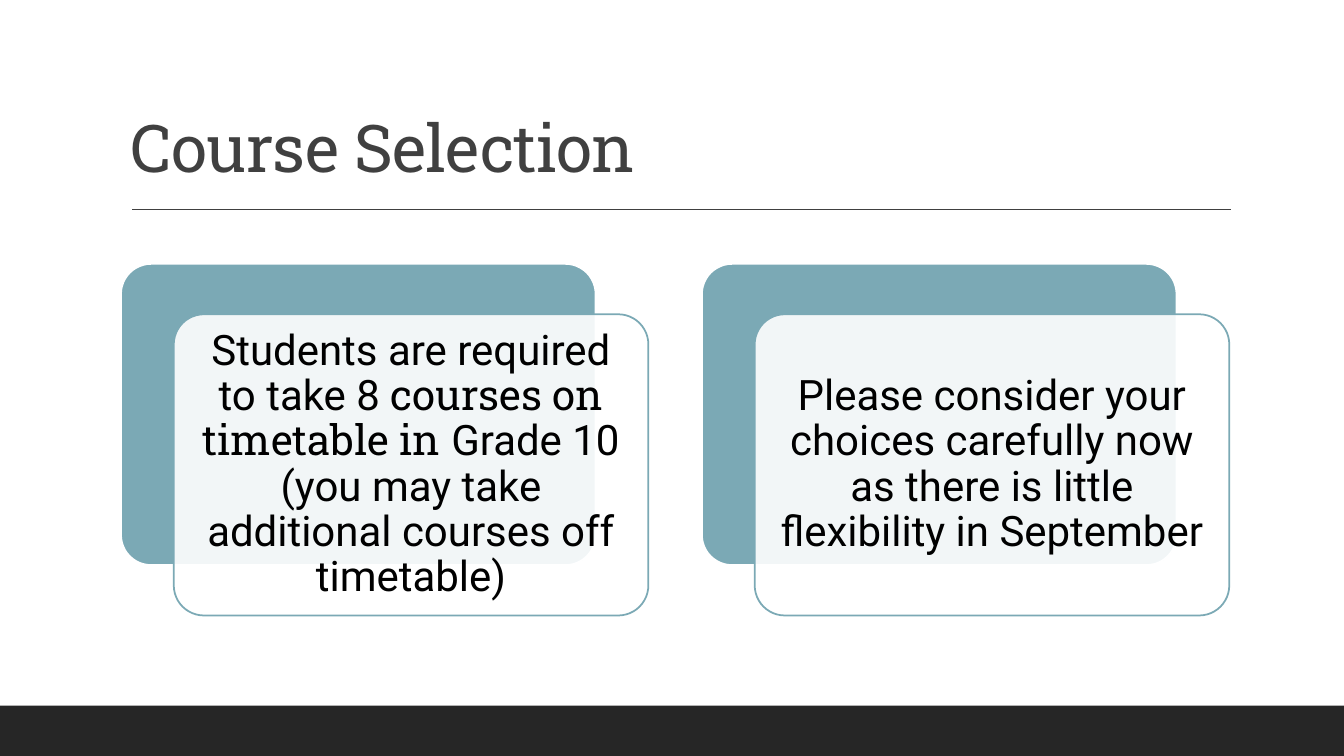
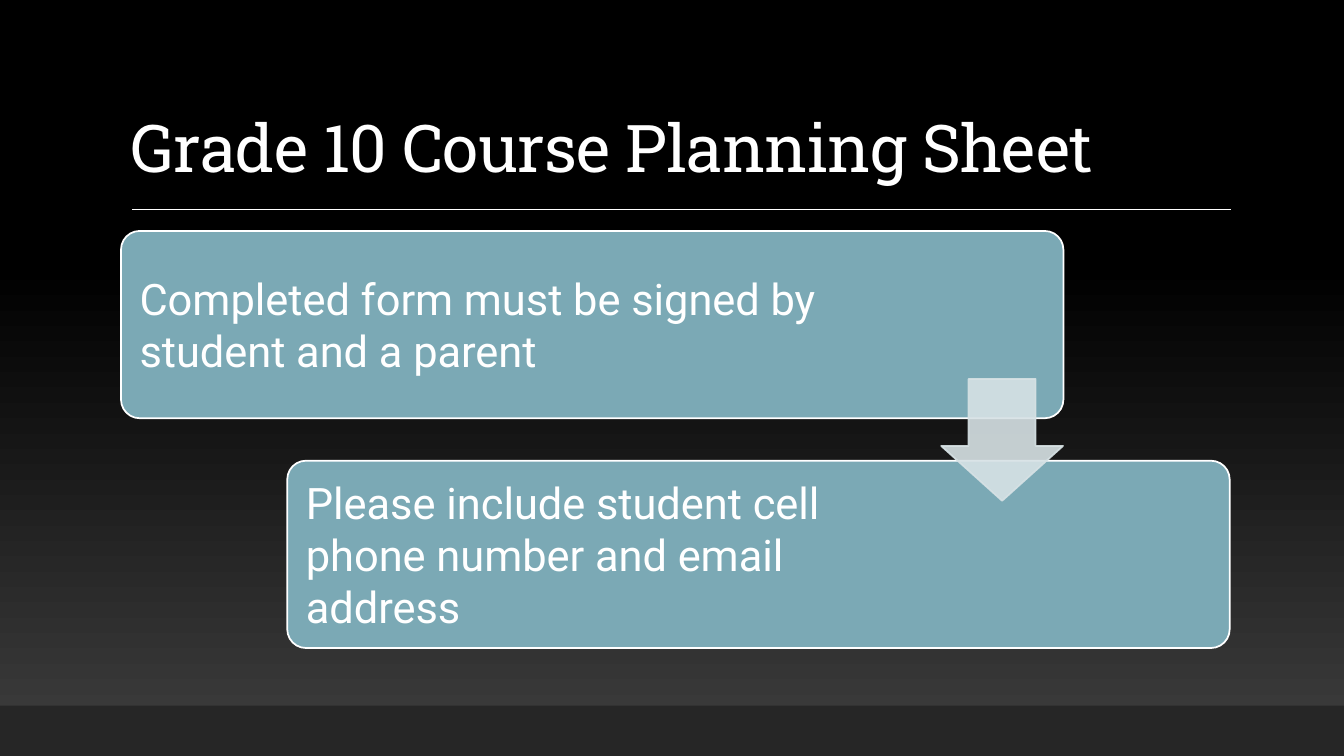
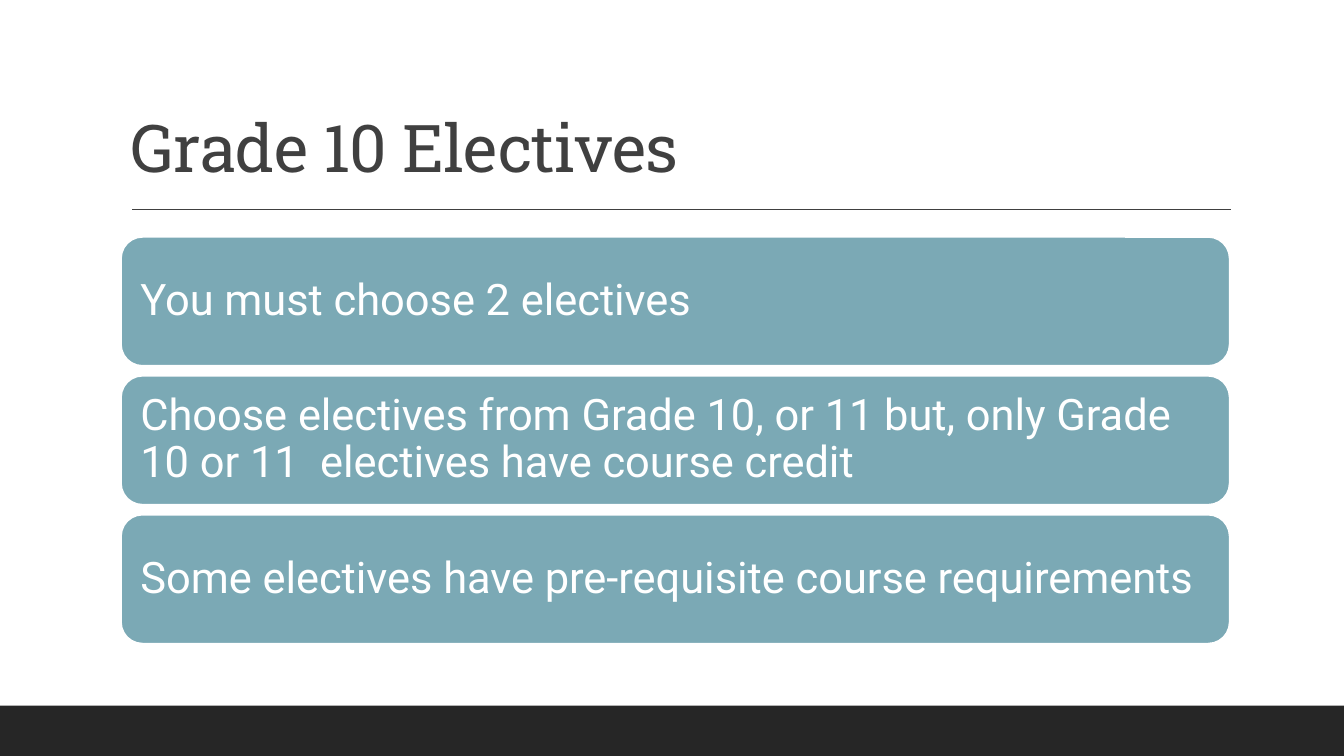
from lxml.etree import SubElement
from pptx import Presentation
from pptx.dml.color import RGBColor
from pptx.enum.shapes import MSO_CONNECTOR as Link, MSO_SHAPE as Form
from pptx.enum.text import MSO_ANCHOR as Anchor, PP_ALIGN as Align
from pptx.oxml.ns import qn
from pptx.util import Cm, Pt

WHITE = RGBColor(0xFF, 0xFF, 0xFF)
BLACK = RGBColor(0x00, 0x00, 0x00)
GREY = RGBColor(0x40, 0x40, 0x40)
ASH = RGBColor(0x3F, 0x3F, 0x3F)
COAL = RGBColor(0x26, 0x26, 0x26)
TEAL = RGBColor(0x7B, 0xA9, 0xB5)
MIST = RGBColor(0xD7, 0xE2, 0xE5)

SANS, SLAB = "Roboto", "Roboto Slab"
PAGE_W, PAGE_H = 33.87, 19.05
BAND_H = 1.27
LEFT, WIDE = 3.05, 27.94


class Deck:
    """Holds the shared style and the slide being drawn; lengths are in cm."""

    def __init__(self):
        self.prs = Presentation()
        self.prs.slide_width, self.prs.slide_height = Cm(PAGE_W), Cm(PAGE_H)
        self.slide = None

    def page(self, title, dark=False):
        """Start a slide with its background, band, rule and title."""
        self.slide = self.prs.slides.add_slide(self.prs.slide_layouts[6])
        fill = self.slide.background.fill
        if dark:
            fill.gradient()
            fill.gradient_angle = 90
            for stop, color, place in zip(fill.gradient_stops, (ASH, BLACK), (0, 0.65)):
                stop.color.rgb, stop.position = color, place
        else:
            fill.solid()
            fill.fore_color.rgb = WHITE
        ink = WHITE if dark else GREY
        self.shape(Form.RECTANGLE, 0, PAGE_H - BAND_H, PAGE_W, BAND_H, COAL)
        self.rule(3.33, 31.01, 5.28, ink)
        box = self.slide.shapes.add_textbox(Cm(LEFT), Cm(0.79), Cm(WIDE), Cm(4.04))
        self.label(box, [(title, SLAB)], 47, ink, anchor=Anchor.BOTTOM, space=0.9, track=-50)

    def rule(self, start, end, y, color):
        line = self.slide.shapes.add_connector(Link.STRAIGHT, Cm(start), Cm(y), Cm(end), Cm(y))
        line.line.color.rgb, line.line.width = color, Pt(1)
        SubElement(line._element.spPr, qn("a:effectLst"))

    def shape(self, form, x, y, w, h, color, edge=None, adj=(), alpha=None, edge_alpha=None):
        item = self.slide.shapes.add_shape(form, Cm(x), Cm(y), Cm(w), Cm(h))
        item.shadow.inherit = False
        for i, ratio in enumerate(adj):
            item.adjustments[i] = ratio
        item.fill.solid()
        item.fill.fore_color.rgb = color
        if edge is None:
            item.line.fill.background()
        else:
            item.line.color.rgb, item.line.width = edge, Pt(1.25)
        props = item._element.spPr
        self.fade(props, alpha)
        self.fade(props.find(qn("a:ln")), edge_alpha)
        return item

    def fade(self, node, alpha):
        """Set the opacity, in percent, of the solid fill right under node."""
        if alpha is not None:
            color = node.find(qn("a:solidFill"))[0]
            SubElement(color, qn("a:alpha")).set("val", str(alpha * 1000))

    def card(self, x, y, w, h, color=TEAL, edge=WHITE, adj=(0.1,), alpha=None):
        return self.shape(Form.ROUNDED_RECTANGLE, x, y, w, h, color, edge, adj, alpha)

    def label(self, item, runs, size, color, align=Align.LEFT, anchor=Anchor.MIDDLE,
              space=None, pad=None, right=None, track=None):
        """Fill item with one paragraph of (text, font) runs."""
        frame = item.text_frame
        frame.word_wrap, frame.vertical_anchor = True, anchor
        if pad is not None:
            frame.margin_left = frame.margin_top = frame.margin_bottom = Cm(pad)
            frame.margin_right = Cm(pad if right is None else right)
        para = frame.paragraphs[0]
        para.alignment, para.line_spacing = align, space
        for text, face in runs:
            run = para.add_run()
            run.text = text
            run.font.name, run.font.size = face, Pt(size)
            run.font.color.rgb = color
            if track is not None:
                run._r.get_or_add_rPr().set("spc", str(track))


def choice(deck):
    deck.page("Course Selection")
    cards = [
        [("Students are required to take 8 ", SANS),
         ("courses on timetable in", SLAB),
         (" Grade 10 (you may take additional courses off timetable)", SANS)],
        [("Please consider your choices carefully now as there is little "
          "flexibility in September", SANS)],
    ]
    top, w, h = 6.65, 11.96, 7.59
    for i, runs in enumerate(cards):
        x = LEFT + i * 14.64
        deck.card(x, top, w, h)
        front = deck.card(x + 1.33, top + 1.27, w, h, WHITE, TEAL, alpha=90)
        deck.label(front, runs, 30, BLACK, Align.CENTER, space=0.9, pad=0.3)


def plan(deck):
    deck.page("Grade 10 Course Planning Sheet", dark=True)
    steps = [
        ("Completed form must be signed by student and a parent", 4.95),
        ("Please include student cell phone number and email address", 7.6),
    ]
    for i, (text, right) in enumerate(steps):
        step = deck.card(LEFT + i * 4.19, 5.82 + i * 5.79, 23.75, 4.72)
        deck.label(step, [(text, SANS)], 31, WHITE, pad=0.33, right=right)
    deck.shape(Form.DOWN_ARROW, 23.72, 9.55, 3.07, 3.07, MIST, MIST, (0.55, 0.45), 90, 90)


def options(deck):
    deck.page("Grade 10 Electives")
    rows = [
        "You must choose 2 electives",
        "Choose electives from Grade 10, or 11 but, only Grade 10 or 11  electives "
        "have course credit",
        "Some electives have pre-requisite course requirements",
    ]
    for i, text in enumerate(rows):
        row = deck.card(LEFT, 5.97 + i * 3.5, WIDE, 3.25, adj=())
        deck.label(row, [(text, SANS)], 31, WHITE, space=0.9, pad=0.33)


def main():
    deck = Deck()
    for draw in (choice, plan, options):
        draw(deck)
    deck.prs.save("out.pptx")


if __name__ == "__main__":
    main()
